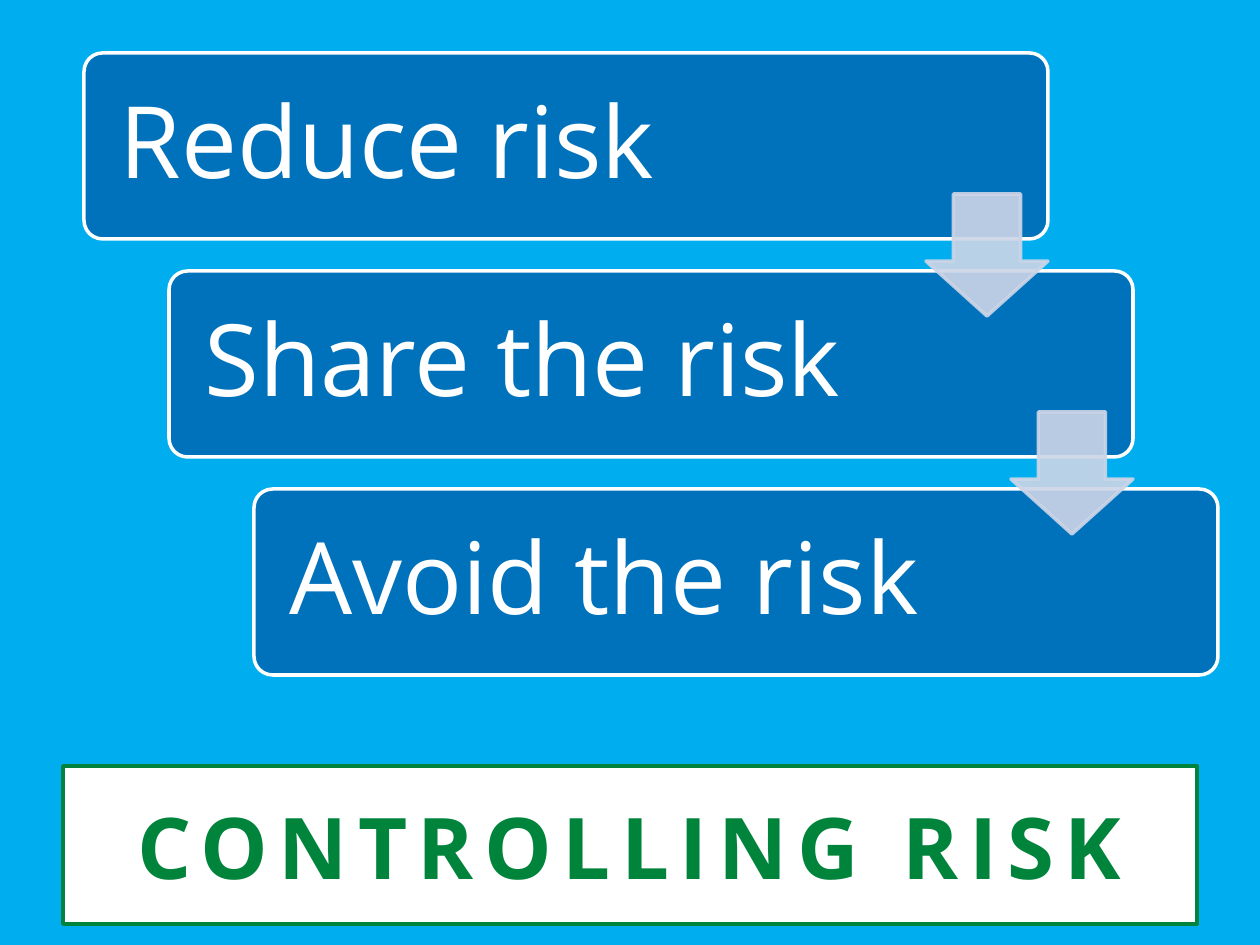
from dataclasses import dataclass

from lxml import etree
from pptx import Presentation
from pptx import util as u
from pptx.dml.color import RGBColor
from pptx.enum import shapes, text
from pptx.oxml.ns import qn

EMU_PER_PX = 914400 / 126
STEP_X, STEP_Y = 85, 218


@dataclass(frozen=True)
class Theme:
    font: str = "Open Sans"
    background: str = "00AEEF"
    card: str = "0072BC"
    arrow: str = "CCD5E7"
    heading: str = "00833B"
    white: str = "FFFFFF"
    heading_size: float = 48.6
    card_size: float = 57
    outline: float = 2
    arrow_opacity: int = 90


@dataclass(frozen=True)
class Box:
    left: int
    top: int
    width: int
    height: int

    def stepped(self, index: int) -> "Box":
        return Box(self.left + index * STEP_X, self.top + index * STEP_Y,
                   self.width, self.height)


THEME = Theme()
STRATEGIES = ("Reduce risk", "Share the risk", "Avoid the risk")
FIRST_CARD = Box(84, 53, 964, 186)
FIRST_ARROW = Box(926, 194, 122, 122)
HEADING = Box(63, 766, 1134, 158)


def px(length: int) -> int:
    return u.Emu(round(length * EMU_PER_PX))


def draw_box(slide, kind, box: Box, fill: str, line: str, adjustments=()):
    drawn = slide.shapes.add_shape(
        kind, px(box.left), px(box.top), px(box.width), px(box.height))
    for index, value in enumerate(adjustments):
        drawn.adjustments[index] = value
    drawn.shadow.inherit = False
    drawn.fill.solid()
    drawn.fill.fore_color.rgb = RGBColor.from_string(fill)
    drawn.line.color.rgb = RGBColor.from_string(line)
    drawn.line.width = u.Pt(THEME.outline)
    return drawn


def write(box, wording: str, size: float, color: str, align):
    frame = box.text_frame
    frame.text = wording
    frame.word_wrap = True
    frame.vertical_anchor = text.MSO_ANCHOR.MIDDLE
    paragraph = frame.paragraphs[0]
    paragraph.alignment = align
    font = paragraph.runs[0].font
    font.name = THEME.font
    font.size = u.Pt(size)
    font.color.rgb = RGBColor.from_string(color)
    return paragraph


def draw_card(slide, box: Box, strategy: str) -> None:
    card = draw_box(slide, shapes.MSO_SHAPE.ROUNDED_RECTANGLE, box,
                    THEME.card, THEME.white, (0.1,))
    paragraph = write(card, strategy, THEME.card_size, THEME.white,
                      text.PP_ALIGN.LEFT)
    paragraph.line_spacing = 0.9
    card.text_frame.margin_left = card.text_frame.margin_right = px(30)


def draw_arrow(slide, box: Box) -> None:
    arrow = draw_box(slide, shapes.MSO_SHAPE.DOWN_ARROW, box,
                     THEME.arrow, THEME.arrow, (0.55, 0.45))
    for color in arrow.element.spPr.iter(qn("a:srgbClr")):
        etree.SubElement(color, qn("a:alpha"),
                         val=str(THEME.arrow_opacity * 1000))


def draw_heading(slide) -> None:
    heading = draw_box(slide, shapes.MSO_SHAPE.RECTANGLE, HEADING,
                       THEME.white, THEME.heading)
    paragraph = write(heading, "CONTROLLING RISK", THEME.heading_size,
                      THEME.heading, text.PP_ALIGN.CENTER)
    font = paragraph.runs[0].font
    font.bold = True
    paragraph.runs[0]._r.get_or_add_rPr().set("spc", "600")


def main() -> None:
    deck = Presentation()
    deck.slide_width, deck.slide_height = px(1260), px(945)
    slide = deck.slides.add_slide(deck.slide_layouts[6])
    slide.background.fill.solid()
    slide.background.fill.fore_color.rgb = RGBColor.from_string(THEME.background)

    draw_heading(slide)
    for index, strategy in enumerate(STRATEGIES):
        draw_card(slide, FIRST_CARD.stepped(index), strategy)
    for index in range(len(STRATEGIES) - 1):
        draw_arrow(slide, FIRST_ARROW.stepped(index))

    deck.save("out.pptx")


if __name__ == "__main__":
    main()
